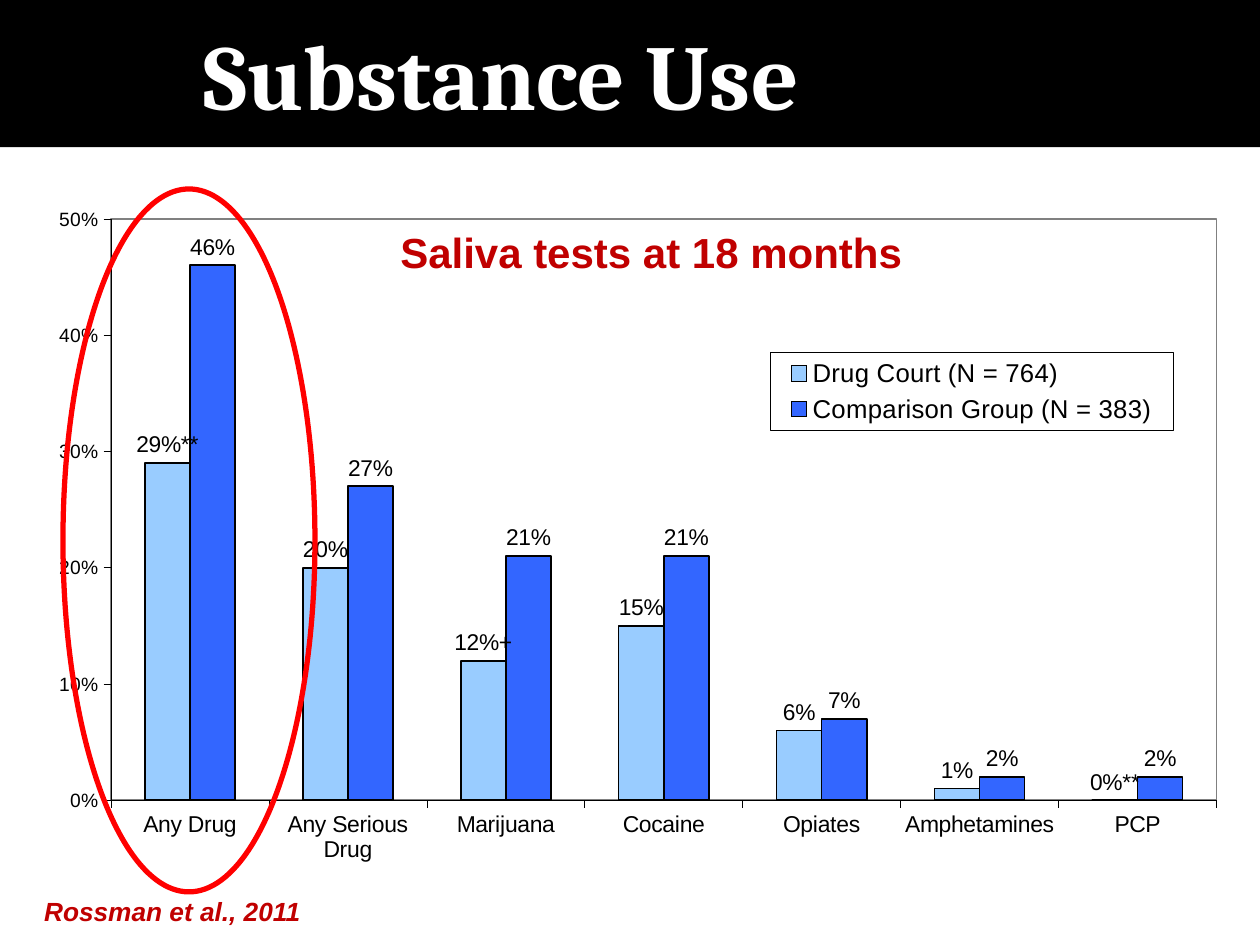
from pptx import Presentation
from pptx.chart.data import CategoryChartData
from pptx.dml.color import RGBColor
from pptx.enum.chart import (XL_CHART_TYPE, XL_LABEL_POSITION,
                             XL_LEGEND_POSITION, XL_TICK_MARK)
from pptx.enum.shapes import MSO_SHAPE
from pptx.enum.text import MSO_ANCHOR, PP_ALIGN
from pptx.oxml import parse_xml
from pptx.oxml.ns import nsdecls
from pptx.util import Cm, Pt

TITLE = "Substance Use"
SUBTITLE = "Saliva tests at 18 months"
CITATION = "Rossman et al., 2011"
CATEGORIES = ["Any Drug", "Any Serious Drug", "Marijuana", "Cocaine",
              "Opiates", "Amphetamines", "PCP"]
# name, values, colour key, labels that carry a significance mark
SERIES = [
    ("Drug Court (N = 764)", [0.29, 0.20, 0.12, 0.15, 0.06, 0.01, 0],
     "court", {0: "29%**", 2: "12%+", 6: "0%**"}),
    ("Comparison Group (N = 383)", [0.46, 0.27, 0.21, 0.21, 0.07, 0.02, 0.02],
     "comparison", {}),
]
THEME = {
    "color": {"ink": "000000", "paper": "FFFFFF", "accent": "C00000",
              "ring": "FF0000", "frame": "808080",
              "court": "99CCFF", "comparison": "3366FF"},
    "size": {"title": 53, "subtitle": 24, "citation": 15, "legend": 14.7,
             "category": 13.1, "label": 13, "value": 11},
    "font": {"title": "Cambria", "body": "Arial"},
}
# Fractions of the chart area: x, y, width, height
PLOT_BOX = (0.059, 0.028, 0.941, 0.814)
LEGEND_BOX = (0.62, 0.215, 0.343, 0.109)


def color(key):
    return RGBColor.from_string(THEME["color"][key])


def style(font, size, ink="ink", face="body", bold=False, italic=False):
    font.name = THEME["font"][face]
    font.size = Pt(THEME["size"][size])
    font.color.rgb = color(ink)
    font.bold, font.italic = bold, italic


def outline(line, key, width):
    line.color.rgb = color(key)
    line.width = Pt(width)


def layout_xml(box, inner=False):
    """Manual chart layout for a box given in fractions of the chart area."""
    target = '<c:layoutTarget val="inner"/>' if inner else ""
    modes = '<c:xMode val="edge"/><c:yMode val="edge"/>'
    places = "".join(f'<c:{k} val="{v}"/>' for k, v in zip("xywh", box))
    return parse_xml(f'<c:layout {nsdecls("c")}><c:manualLayout>{target}{modes}'
                     f'{places}</c:manualLayout></c:layout>')


def frame_xml(key, width):
    """White fill with a thin border, for parts of a chart."""
    paper, edge = THEME["color"]["paper"], THEME["color"][key]
    return parse_xml(
        f'<c:spPr {nsdecls("c", "a")}>'
        f'<a:solidFill><a:srgbClr val="{paper}"/></a:solidFill>'
        f'<a:ln w="{Pt(width)}"><a:solidFill><a:srgbClr val="{edge}"/>'
        f'</a:solidFill></a:ln></c:spPr>')


def add_text(slide, text, box, size, **fmt):
    tf = slide.shapes.add_textbox(*map(Cm, box)).text_frame
    tf.word_wrap = True
    tf.text = text
    style(tf.paragraphs[0].runs[0].font, size, **fmt)
    return tf


def add_banner(slide, width):
    sp = slide.shapes.add_shape(MSO_SHAPE.RECTANGLE, 0, 0, width, Cm(2.97))
    sp.shadow.inherit = False
    sp.fill.solid()
    sp.fill.fore_color.rgb = color("ink")
    sp.line.fill.background()
    tf = sp.text_frame
    tf.vertical_anchor = MSO_ANCHOR.MIDDLE
    tf.margin_left = Cm(4.1)
    tf.text = TITLE
    p = tf.paragraphs[0]
    p.alignment = PP_ALIGN.LEFT
    style(p.runs[0].font, "title", "paper", "title", bold=True)


def style_axis(axis, size):
    axis.has_major_gridlines = False
    axis.major_tick_mark = XL_TICK_MARK.OUTSIDE
    axis.minor_tick_mark = XL_TICK_MARK.NONE
    outline(axis.format.line, "ink", 0.25)
    style(axis.tick_labels.font, size)


def style_series(series, fill, marked):
    series.format.fill.solid()
    series.format.fill.fore_color.rgb = color(fill)
    outline(series.format.line, "ink", 1)
    labels = series.data_labels
    labels.show_value = True
    labels.number_format, labels.number_format_is_linked = "0%", False
    labels.position = XL_LABEL_POSITION.OUTSIDE_END
    style(labels.font, "label")
    for i, text in marked.items():
        label = series.points[i].data_label
        label.text_frame.text = text
        label.position = XL_LABEL_POSITION.OUTSIDE_END
        style(label.text_frame.paragraphs[0].runs[0].font, "label")


def add_results_chart(slide):
    data = CategoryChartData(number_format="0%")
    data.categories = CATEGORIES
    for name, values, *_ in SERIES:
        data.add_series(name, values)
    chart = slide.shapes.add_chart(XL_CHART_TYPE.COLUMN_CLUSTERED, Cm(0.84), Cm(4.01),
                                   Cm(23.7), Cm(14.4), data).chart
    chart.has_title = False
    style(chart.font, "value")

    plot = chart.plots[0]
    plot.gap_width, plot.overlap = 150, 0
    plot.vary_by_categories = False
    for series, (_, _, fill, marked) in zip(plot.series, SERIES):
        style_series(series, fill, marked)

    style_axis(chart.category_axis, "category")
    axis = chart.value_axis
    style_axis(axis, "value")
    axis.minimum_scale, axis.maximum_scale, axis.major_unit = 0, 0.5, 0.1
    axis.tick_labels.number_format = "0%"
    axis.tick_labels.number_format_is_linked = False

    area = chart._chartSpace.chart.plotArea
    for old in area.xpath("c:layout"):
        area.remove(old)
    area.insert(0, layout_xml(PLOT_BOX, inner=True))
    area.append(frame_xml("frame", 1))

    chart.has_legend = True
    legend = chart.legend
    legend.position = XL_LEGEND_POSITION.RIGHT
    legend.include_in_layout = False
    style(legend.font, "legend")
    el = legend._element
    for old in el.xpath("c:layout"):
        el.remove(old)
    el.xpath("c:legendPos")[0].addnext(layout_xml(LEGEND_BOX))
    el.xpath("c:txPr")[0].addprevious(frame_xml("ink", 0.25))


def add_ring(slide):
    sp = slide.shapes.add_shape(MSO_SHAPE.OVAL, Cm(1.27), Cm(3.81), Cm(5.08), Cm(14.17))
    sp.shadow.inherit = False
    sp.fill.background()
    outline(sp.line, "ring", 3)


def main():
    prs = Presentation()
    prs.slide_width, prs.slide_height = Cm(25.4), Cm(19.05)
    s = prs.slides.add_slide(prs.slide_layouts[6])
    add_banner(s, prs.slide_width)
    add_results_chart(s)
    tf = add_text(s, SUBTITLE, (7.82, 4.45, 10.72, 1.27), "subtitle",
                  ink="accent", bold=True)
    tf.word_wrap = False
    add_ring(s)
    add_text(s, CITATION, (0.64, 17.93, 6.35, 0.89), "citation",
             ink="accent", bold=True, italic=True)
    prs.save("out.pptx")


if __name__ == "__main__":
    main()
